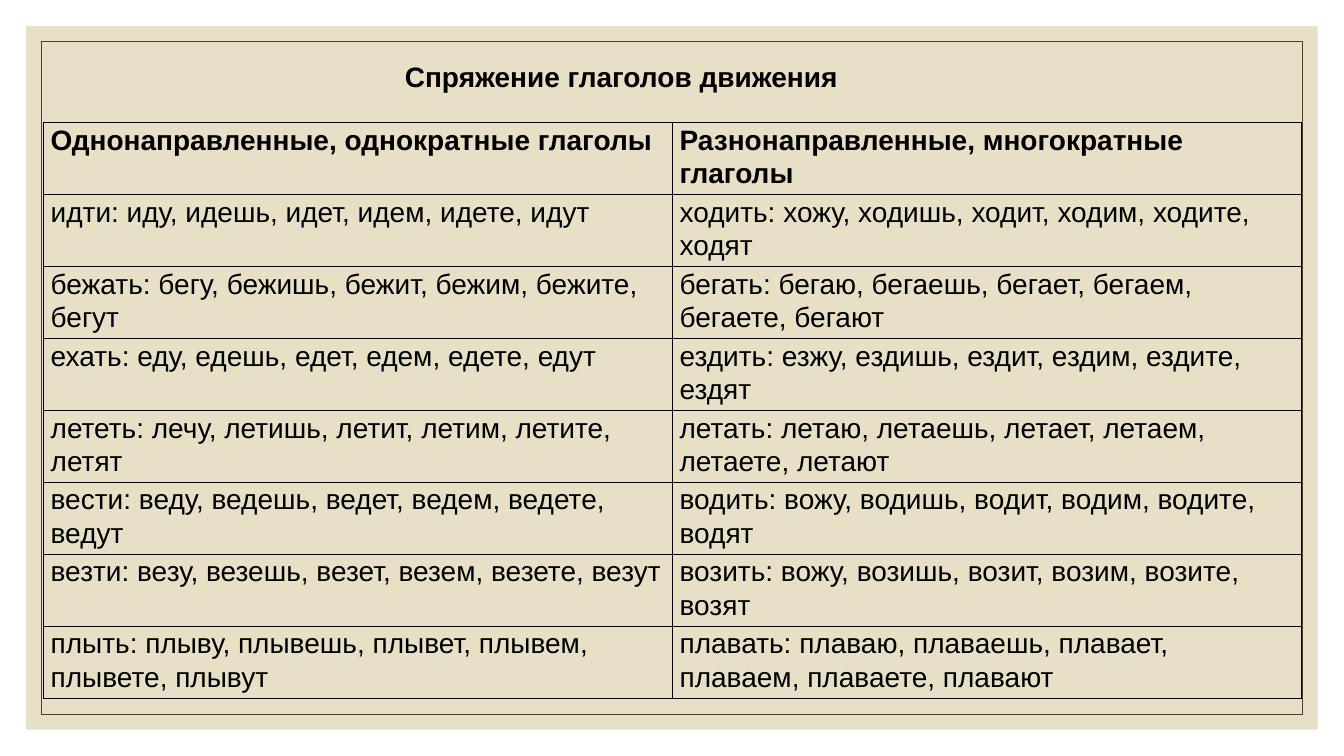
"""Build a slide with a conjugation table of Russian verbs of motion."""
from lxml import etree
from pptx import Presentation
from pptx.dml.color import RGBColor
from pptx.enum.shapes import MSO_SHAPE
from pptx.enum.text import MSO_ANCHOR, PP_ALIGN
from pptx.oxml.ns import qn
from pptx.util import Pt

TITLE = "Спряжение глаголов движения"
VERB_ROWS = [
    ("Однонаправленные, однократные глаголы", "Разнонаправленные, многократные глаголы"),
    ("идти: иду, идешь, идет, идем, идете, идут",
     "ходить: хожу, ходишь, ходит, ходим, ходите, ходят"),
    ("бежать: бегу, бежишь, бежит, бежим, бежите, бегут",
     "бегать: бегаю, бегаешь, бегает, бегаем, бегаете, бегают"),
    ("ехать: еду, едешь, едет, едем, едете, едут",
     "ездить: езжу, ездишь, ездит, ездим, ездите, ездят"),
    ("лететь: лечу, летишь, летит, летим, летите, летят",
     "летать: летаю, летаешь, летает, летаем, летаете, летают"),
    ("вести: веду, ведешь, ведет, ведем, ведете, ведут",
     "водить: вожу, водишь, водит, водим, водите, водят"),
    ("везти: везу, везешь, везет, везем, везете, везут",
     "возить: вожу, возишь, возит, возим, возите, возят"),
    ("плыть: плыву, плывешь, плывет, плывем, плывете, плывут",
     "плавать: плаваю, плаваешь, плавает, плаваем, плаваете, плавают"),
]

FONT = "Arial"
BLACK = RGBColor(0x00, 0x00, 0x00)
SAND = RGBColor(0xE7, 0xE0, 0xC7)
FRAME_GRAY = RGBColor(0x40, 0x40, 0x40)
RECTANGLE = MSO_SHAPE.RECTANGLE
TOP = MSO_ANCHOR.TOP
LEFT, CENTER = PP_ALIGN.LEFT, PP_ALIGN.CENTER

SLIDE_WIDTH, SLIDE_HEIGHT = 960, 540
PANEL_MARGIN, FRAME_MARGIN = 18.75, 29.5
TITLE_BOX = (277, 37.5, 333.5, 31)
TABLE_LEFT, TABLE_TOP = 31, 87.5
COLUMN_WIDTH, ROW_HEIGHT = 449.25, 51.43
CELL_INSET = 5.2
TITLE_LAYOUT = 5


def write_text(text_frame, text, bold=False, align=LEFT):
    """Write one formatted paragraph into a text frame."""
    text_frame.word_wrap = True
    paragraph = text_frame.paragraphs[0]
    paragraph.alignment = align
    paragraph.line_spacing = 1.07
    paragraph.space_before = Pt(0)
    paragraph.space_after = Pt(8)
    run = paragraph.add_run()
    run.text = text
    run.font.name = FONT
    run.font.size = Pt(20)
    run.font.bold = bold
    run.font.color.rgb = BLACK


def add_panel(slide, margin):
    """Add an unfilled, unlined rectangle inset evenly from the slide edges."""
    panel = slide.shapes.add_shape(
        RECTANGLE, Pt(margin), Pt(margin),
        Pt(SLIDE_WIDTH - 2 * margin), Pt(SLIDE_HEIGHT - 2 * margin))
    panel.shadow.inherit = False
    panel.fill.background()
    panel.line.fill.background()
    return panel


def add_borders(cell):
    """Draw a thin black line on each side of a cell."""
    properties = cell._tc.get_or_add_tcPr()
    for side in ("a:lnL", "a:lnR", "a:lnT", "a:lnB"):
        line = etree.SubElement(properties, qn(side), w=str(Pt(1)))
        fill = etree.SubElement(line, qn("a:solidFill"))
        etree.SubElement(fill, qn("a:srgbClr"), val=str(BLACK))


def add_verb_table(slide):
    """Add the two-column table of verb forms."""
    row_count, column_count = len(VERB_ROWS), len(VERB_ROWS[0])
    table = slide.shapes.add_table(
        row_count, column_count, Pt(TABLE_LEFT), Pt(TABLE_TOP),
        Pt(COLUMN_WIDTH * column_count), Pt(ROW_HEIGHT * row_count)).table
    table.first_row = False
    table.horz_banding = False
    for row_index, verbs in enumerate(VERB_ROWS):
        for column_index, text in enumerate(verbs):
            cell = table.cell(row_index, column_index)
            cell.margin_left = cell.margin_right = Pt(CELL_INSET)
            cell.margin_top = cell.margin_bottom = Pt(0)
            cell.vertical_anchor = TOP
            add_borders(cell)
            cell.fill.background()
            write_text(cell.text_frame, text, bold=row_index == 0)


def main():
    """Create the presentation and save it."""
    presentation = Presentation()
    presentation.slide_width = Pt(SLIDE_WIDTH)
    presentation.slide_height = Pt(SLIDE_HEIGHT)
    slide = presentation.slides.add_slide(presentation.slide_layouts[TITLE_LAYOUT])

    panel = add_panel(slide, PANEL_MARGIN)
    panel.fill.solid()
    panel.fill.fore_color.rgb = SAND
    frame = add_panel(slide, FRAME_MARGIN)
    frame.line.color.rgb = FRAME_GRAY
    frame.line.width = Pt(0.5)

    title = slide.shapes.title
    title.element.getparent().append(title.element)
    title.left, title.top, title.width, title.height = map(Pt, TITLE_BOX)
    title.text_frame.vertical_anchor = TOP
    write_text(title.text_frame, TITLE, bold=True, align=CENTER)

    add_verb_table(slide)
    presentation.save("out.pptx")


if __name__ == "__main__":
    main()
